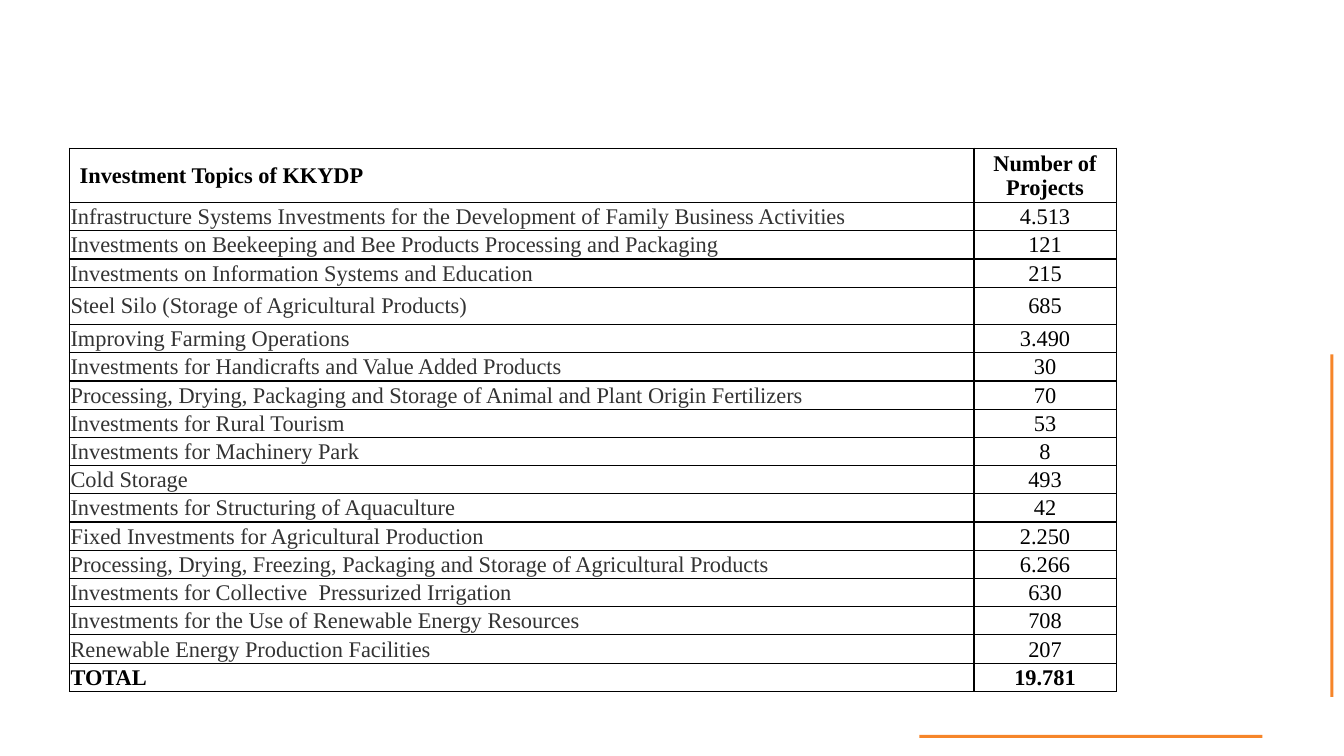
from dataclasses import dataclass

from lxml import etree
from pptx import Presentation
from pptx.dml.color import RGBColor
from pptx.enum import shapes, text
from pptx.oxml import ns
from pptx.util import Inches, Pt


@dataclass(frozen=True)
class Theme:
    font: str = "Times New Roman"
    size: int = 16
    black: str = "000000"
    topic: str = "333333"
    accent: str = "F68529"
    border: int = 1


theme = Theme()


def add_borders(cell):
    properties = cell._tc.get_or_add_tcPr()
    for side in ("a:lnL", "a:lnR", "a:lnT", "a:lnB"):
        line = etree.SubElement(properties, ns.qn(side), w=str(Pt(theme.border)))
        fill = etree.SubElement(line, ns.qn("a:solidFill"))
        etree.SubElement(fill, ns.qn("a:srgbClr"), val=theme.black)


presentation = Presentation()
presentation.slide_width = Inches(13.33)
presentation.slide_height = Inches(7.5)
slide = presentation.slides.add_slide(presentation.slide_layouts[6])

# Accent bars at the right and bottom edges
for left, top, rotation in ((11.51, 5.2, 90), (9.12, 7.29, 0)):
    bar = slide.shapes.add_shape(
        shapes.MSO_SHAPE.RECTANGLE, Inches(left), Inches(top), Inches(3.4), Inches(0.03))
    bar.rotation = rotation
    bar.shadow.inherit = False
    bar.fill.solid()
    bar.fill.fore_color.rgb = RGBColor.from_string(theme.accent)
    bar.line.fill.background()

# Projects by investment topic
rows = [
    ("Investment Topics of KKYDP", "Number of Projects"),
    ("Infrastructure Systems Investments for the Development of Family Business Activities", "4.513"),
    ("Investments on Beekeeping and Bee Products Processing and Packaging", "121"),
    ("Investments on Information Systems and Education", "215"),
    ("Steel Silo (Storage of Agricultural Products)", "685"),
    ("Improving Farming Operations", "3.490"),
    ("Investments for Handicrafts and Value Added Products", "30"),
    ("Processing, Drying, Packaging and Storage of Animal and Plant Origin Fertilizers", "70"),
    ("Investments for Rural Tourism", "53"),
    ("Investments for Machinery Park", "8"),
    ("Cold Storage", "493"),
    ("Investments for Structuring of Aquaculture", "42"),
    ("Fixed Investments for Agricultural Production", "2.250"),
    ("Processing, Drying, Freezing, Packaging and Storage of Agricultural Products", "6.266"),
    ("Investments for Collective  Pressurized Irrigation", "630"),
    ("Investments for the Use of Renewable Energy Resources", "708"),
    ("Renewable Energy Production Facilities", "207"),
    ("TOTAL", "19.781"),
]
header, silo, total = 0, 4, len(rows) - 1
special_heights = {header: 0.54, silo: 0.37}

table = slide.shapes.add_table(
    len(rows), 2, Inches(0.69), Inches(1.47), Inches(10.38), Inches(5.36)).table
table.first_row = False
table.horz_banding = False
for column, width in zip(table.columns, (8.97, 1.41)):
    column.width = Inches(width)

for row_index, values in enumerate(rows):
    table.rows[row_index].height = Inches(special_heights.get(row_index, 0.28))
    emphasized = row_index in (header, total)
    for column_index, value in enumerate(values):
        is_topic = column_index == 0
        cell = table.cell(row_index, column_index)
        add_borders(cell)
        cell.fill.background()
        cell.vertical_anchor = text.MSO_ANCHOR.MIDDLE
        side_margin = 0.05 if row_index == header else 0.01
        cell.margin_left = Inches(0.1 if row_index == header and is_topic else side_margin)
        cell.margin_right = Inches(side_margin)
        cell.margin_top = Inches(0.01)
        cell.margin_bottom = 0

        cell.text = value
        paragraph = cell.text_frame.paragraphs[0]
        paragraph.alignment = text.PP_ALIGN.LEFT if is_topic else text.PP_ALIGN.CENTER
        paragraph.font.name = theme.font
        paragraph.font.size = Pt(theme.size)
        paragraph.font.bold = emphasized
        color = theme.topic if is_topic and not emphasized else theme.black
        paragraph.font.color.rgb = RGBColor.from_string(color)

presentation.save("out.pptx")
